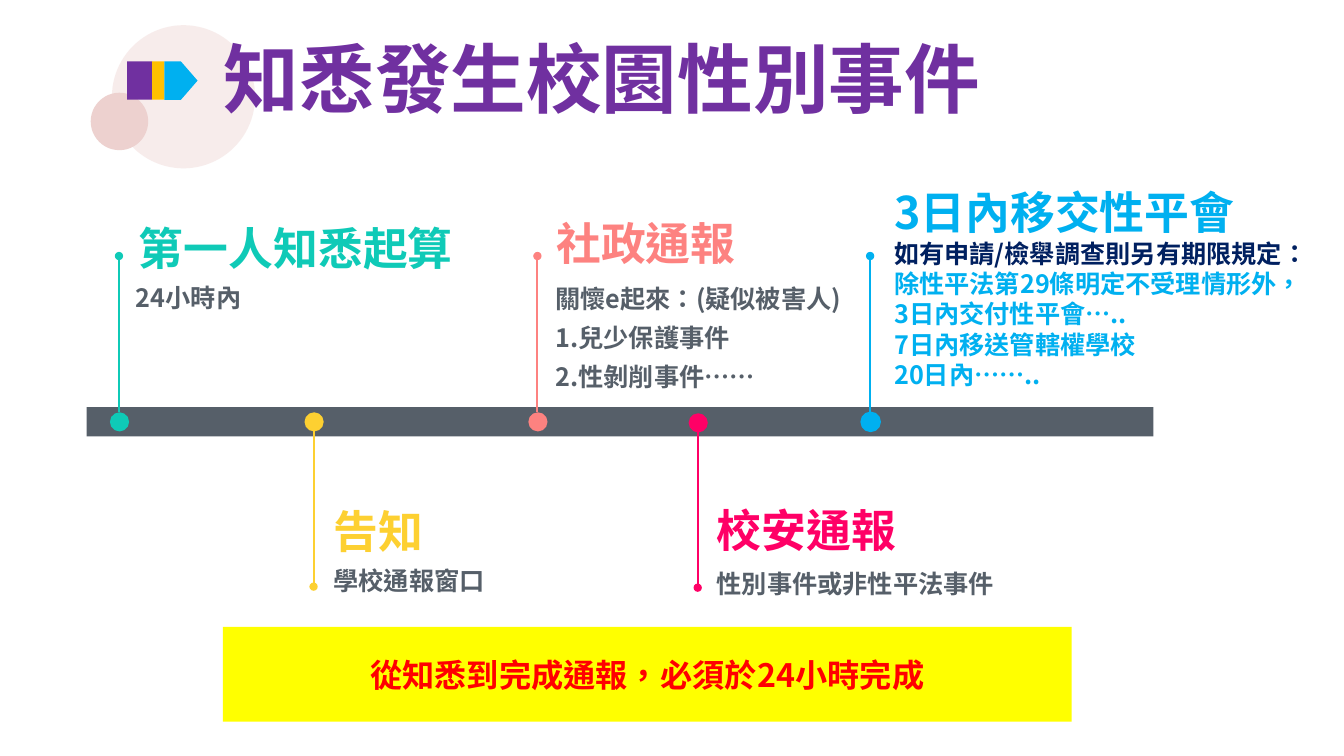
from dataclasses import dataclass

from lxml.etree import SubElement
from pptx import Presentation
from pptx.dml.color import RGBColor
from pptx.enum.shapes import MSO_CONNECTOR, MSO_SHAPE as Shape
from pptx.enum.text import MSO_ANCHOR as Anchor, MSO_AUTO_SIZE as AutoSize, PP_ALIGN as Align
from pptx.oxml.ns import qn
from pptx.util import Pt

EMU_PER_PX = 9144  # 100 px to the inch


@dataclass(frozen=True)
class Theme:
    font: str = "Noto Sans CJK SC"
    language: str = "zh-TW"
    title_size: int = 54
    heading_size: int = 32
    banner_size: int = 23
    body_size: int = 18
    purple: str = "7030A0"
    amber: str = "FFC000"
    blue: str = "00B0F0"
    navy: str = "002060"
    slate: str = "565F69"
    teal: str = "0FCAB7"
    gold: str = "FDD031"
    coral: str = "FD8280"
    pink: str = "FF0066"
    yellow: str = "FFFF00"
    red: str = "FF0000"
    pale_rose: str = "F6E8E7"
    rose: str = "EDD1CF"


def px(value):
    return value * EMU_PER_PX


class SlideBuilder:
    def __init__(self, slide, theme):
        self.slide = slide
        self.theme = theme

    def shape(self, kind, box, color, alpha=None, outline=None):
        shape = self.slide.shapes.add_shape(kind, *map(px, box))
        shape.shadow.inherit = False
        shape.fill.solid()
        shape.fill.fore_color.rgb = RGBColor.from_string(color)
        if alpha is not None:
            fill_color = shape._element.spPr.find(qn("a:solidFill"))[0]
            SubElement(fill_color, qn("a:alpha")).set("val", str(alpha * 1000))
        if outline:
            shape.line.color.rgb = RGBColor.from_string(color)
            shape.line.width = Pt(outline)
        else:
            shape.line.fill.background()
        return shape

    def fill_text(self, frame, paragraphs, align=Align.LEFT, spacing=None):
        """Each paragraph is a list of (text, size, color) lines."""
        for index, lines in enumerate(paragraphs):
            paragraph = frame.add_paragraph() if index else frame.paragraphs[0]
            paragraph.alignment = align
            if spacing:
                paragraph.line_spacing = spacing
            _, base_size, base_color = lines[0]
            font = paragraph.font
            font.name, font.size, font.bold = self.theme.font, Pt(base_size), True
            font.color.rgb = RGBColor.from_string(base_color)
            properties = paragraph._p.pPr.find(qn("a:defRPr"))
            properties.set("lang", self.theme.language)
            SubElement(properties, qn("a:ea")).set("typeface", self.theme.font)
            for position, (text, size, color) in enumerate(lines):
                if position:
                    paragraph.add_line_break()
                run = paragraph.add_run()
                run.text = text
                if size != base_size:
                    run.font.size = Pt(size)
                if color != base_color:
                    run.font.color.rgb = RGBColor.from_string(color)

    def text(self, box, paragraphs, wrap=False, spacing=None):
        frame = self.slide.shapes.add_textbox(*map(px, box)).text_frame
        frame.word_wrap = wrap
        frame.auto_size = AutoSize.SHAPE_TO_FIT_TEXT
        self.fill_text(frame, paragraphs, spacing=spacing)

    def title(self, box, text):
        title = self.slide.shapes.title
        title.left, title.top, title.width, title.height = map(px, box)
        frame = title.text_frame
        frame.word_wrap = False
        frame.auto_size = AutoSize.SHAPE_TO_FIT_TEXT
        frame.vertical_anchor = Anchor.TOP
        self.fill_text(frame, [[(text, self.theme.title_size, self.theme.purple)]], Align.CENTER)

    def banner(self, box, text):
        frame = self.shape(Shape.RECTANGLE, box, self.theme.yellow).text_frame
        frame.word_wrap = True
        frame.vertical_anchor = Anchor.MIDDLE
        self.fill_text(frame, [[(text, self.theme.banner_size, self.theme.red)]], Align.CENTER)

    def milestone(self, center, top, color, upward, outline=None):
        dot, stem = 19, 155
        self.shape(Shape.OVAL, (center - 9, top, dot, dot), color, outline=outline)
        start = top if upward else top + dot - 1
        end = start - stem if upward else start + stem
        connector = self.slide.shapes.add_connector(
            MSO_CONNECTOR.STRAIGHT, px(center), px(start), px(center), px(end))
        connector.line.color.rgb = RGBColor.from_string(color)
        connector.line.width = Pt(1.5)
        properties = connector._element.spPr
        SubElement(properties.find(qn("a:ln")), qn("a:tailEnd")).set("type", "oval")
        SubElement(properties, qn("a:effectLst"))


def main():
    presentation = Presentation()
    presentation.slide_width, presentation.slide_height = px(1333), px(750)
    slide = presentation.slides.add_slide(presentation.slide_layouts[5])
    theme = Theme()
    builder = SlideBuilder(slide, theme)

    # Title with its circles and striped arrow
    builder.shape(Shape.OVAL, (111, 25, 142, 142), theme.pale_rose, alpha=80)
    builder.shape(Shape.OVAL, (90, 92, 57, 57), theme.rose)
    builder.title((208, 27, 778, 101), "知悉發生校園性別事件")
    # Bring the title text in front of the circles
    slide.shapes._spTree.append(slide.shapes.title._element)
    left = 126
    for kind, width, color in (
        (Shape.RECTANGLE, 25, theme.purple),
        (Shape.RECTANGLE, 12, theme.amber),
        (Shape.PENTAGON, 33, theme.blue),
    ):
        builder.shape(kind, (left, 61, width, 38), color)
        left += width

    # Timeline bar and milestones
    builder.shape(Shape.RECTANGLE, (86, 404, 1058, 29), theme.slate)
    for center, top, color, upward, outline in (
        (118, 409, theme.teal, True, None),
        (311, 409, theme.gold, False, None),
        (533, 409, theme.coral, True, None),
        (692, 410, theme.pink, False, None),
        (863, 409, theme.blue, True, 1),
    ):
        builder.milestone(center, top, color, upward, outline)

    # Milestone headings
    for box, text, color in (
        ((128, 214, 334, 64), "第一人知悉起算", theme.teal),
        ((321, 495, 110, 64), "告知", theme.gold),
        ((542, 209, 200, 64), "社政通報", theme.coral),
        ((701, 494, 200, 64), "校安通報", theme.pink),
    ):
        builder.text(box, [[(text, theme.heading_size, color)]])

    # Milestone details
    for box, texts, wrap, spacing in (
        ((125, 275, 126, 40), ["24小時內"], True, None),
        ((321, 556, 172, 40), ["學校通報窗口"], False, None),
        ((541, 267, 336, 124),
         ["關懷e起來：(疑似被害人)", "1.兒少保護事件", "2.性剝削事件……"], True, 1.3),
        ((701, 559, 298, 40), ["性別事件或非性平法事件"], False, None),
    ):
        paragraphs = [[(text, theme.body_size, theme.slate)] for text in texts]
        builder.text(box, paragraphs, wrap, spacing)

    # Transfer deadlines
    deadlines = ["除性平法第29條明定不受理情形外，", "3日內交付性平會…..",
                 "7日內移送管轄權學校", "20日內…….."]
    heading = [("3日內移交性平會", theme.heading_size, theme.blue),
               ("如有申請/檢舉調查則另有期限規定：", theme.body_size, theme.navy)]
    builder.text((877, 178, 435, 215),
                 [heading] + [[(text, theme.body_size, theme.blue)] for text in deadlines])

    # Closing banner
    builder.banner((221, 622, 842, 94), "從知悉到完成通報，必須於24小時完成")

    presentation.save("out.pptx")


if __name__ == "__main__":
    main()
